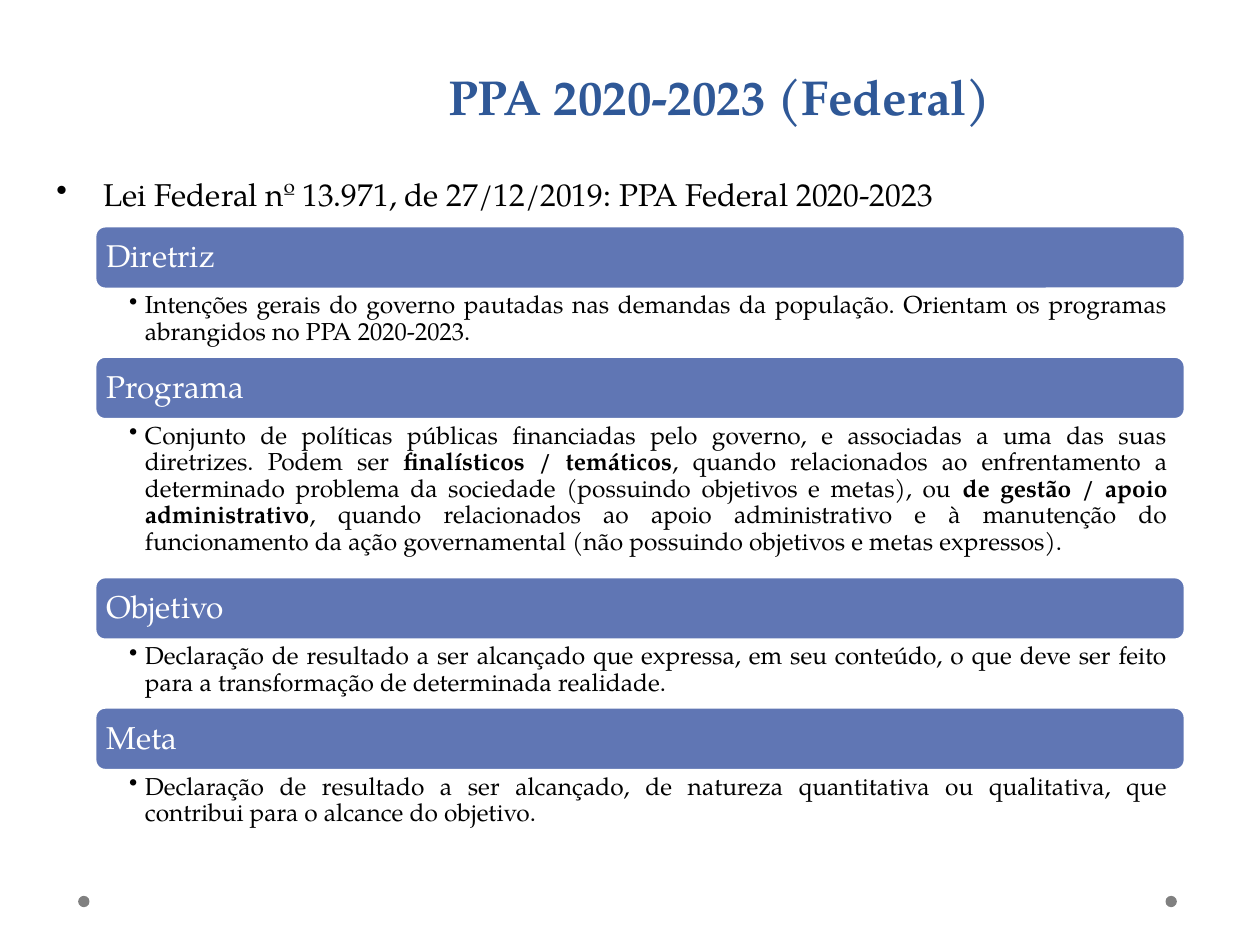
from pptx import Presentation
from pptx.dml.color import RGBColor
from pptx.enum.shapes import MSO_SHAPE as Kind
from pptx.enum.text import MSO_ANCHOR as Anchor, MSO_AUTO_SIZE as Fit, PP_ALIGN as Align
from pptx.util import Inches, Pt
from lxml.etree import SubElement
from pptx.oxml.ns import qn

# Grid of 100 columns by 75 rows
COLS, ROWS = 100, 75
WIDE, HIGH = Inches(10), Inches(7.5)
FONT = "TeX Gyre Pagella"
BLUE, BAR, GREY, WHITE, BLACK = "2F5897", "6076B4", "808080", "FFFFFF", "000000"
BAR_ROWS = 5.08

# Heading, rows of its text, text as (words, bold) parts
TERMS = [
    ("Diretriz", 5.27, [
        ("Intenções gerais do governo pautadas nas demandas da população. "
         "Orientam os programas abrangidos no PPA 2020-2023.", False)]),
    ("Programa", 12.42, [
        ("Conjunto de políticas públicas financiadas pelo governo, e associadas "
         "a uma das suas diretrizes. Podem ser ", False),
        ("finalísticos / temáticos", True),
        (", quando relacionados ao enfrentamento a determinado problema da "
         "sociedade (possuindo objetivos e metas), ou ", False),
        ("de gestão / apoio administrativo", True),
        (", quando relacionados ao apoio administrativo e à manutenção do "
         "funcionamento da ação governamental (não possuindo objetivos e metas "
         "expressos).", False)]),
    ("Objetivo", 5.27, [
        ("Declaração de resultado a ser alcançado que expressa, em seu conteúdo, "
         "o que deve ser feito para a transformação de determinada realidade.", False)]),
    ("Meta", 5.27, [
        ("Declaração de resultado a ser alcançado, de natureza quantitativa ou "
         "qualitativa, que contribui para o alcance do objetivo.", False)]),
]


def color(code):
    return RGBColor.from_string(code)


def col(n):
    return round(WIDE * n / COLS)


def row(n):
    return round(HIGH * n / ROWS)


def area(box):
    x, y, w, h = box
    return col(x), row(y), col(w), row(h)


def apply(item, values):
    for name, value in values.items():
        setattr(item, name, value)


def write(shape, parts, size, ink, para, frame=None, hang=0):
    """Fill a shape with one paragraph; hang is the bullet indent in columns."""
    text = shape.text_frame
    apply(text, {"word_wrap": True, "auto_size": Fit.NONE, **(frame or {})})
    line = text.paragraphs[0]
    apply(line, para)
    if hang:
        props = line._p.get_or_add_pPr()
        props.set("marL", str(col(hang)))
        props.set("indent", str(-col(hang)))
        SubElement(props, qn("a:buChar")).set("char", "•")
    for words, bold in parts:
        run = line.add_run()
        run.text = words
        apply(run.font, {"name": FONT, "size": Pt(size), "bold": bold})
        run.font.color.rgb = color(ink)


def margins(left, top, right, bottom):
    return {"margin_left": col(left), "margin_top": row(top),
            "margin_right": col(right), "margin_bottom": row(bottom)}


def solid(slide, kind, box, fill):
    shape = slide.shapes.add_shape(kind, *area(box))
    shape.shadow.inherit = False
    shape.fill.solid()
    shape.fill.fore_color.rgb = color(fill)
    shape.line.fill.background()
    return shape


def add_dots(slide, box):
    x, y, w, h = box
    for left in (x, x + w - h):
        solid(slide, Kind.OVAL, (left, y, h, h), GREY)


def add_title(slide, box):
    title = slide.shapes.title
    apply(title, dict(zip(("left", "top", "width", "height"), area(box))))
    write(title, [("PPA 2020-2023 (Federal)", True)], 28, BLUE,
          {"alignment": Align.CENTER, "line_spacing": Pt(58)},
          {"vertical_anchor": Anchor.MIDDLE})


def add_law(slide, box):
    words = "Lei Federal nº 13.971, de 27/12/2019: PPA Federal 2020-2023"
    write(slide.shapes.add_textbox(*area(box)), [(words, False)], 18, BLACK,
          {"alignment": Align.JUSTIFY}, hang=3.75)


def add_term(slide, box, head, parts):
    """A heading bar with its bulleted text below."""
    x, y, w, h = box
    para = {"alignment": Align.JUSTIFY, "line_spacing": 0.9}
    bar = solid(slide, Kind.ROUNDED_RECTANGLE, (x, y, w, BAR_ROWS), BAR)
    bar.line.color.rgb = color(WHITE)
    bar.line.width = Pt(2.25)
    write(bar, [(head, False)], 18, WHITE, para,
          {"vertical_anchor": Anchor.MIDDLE, **margins(0.7, 0.7, 0.7, 0.7)})
    body = slide.shapes.add_textbox(*area((x, y + BAR_ROWS, w, h - BAR_ROWS)))
    write(body, parts, 14, BLACK, para, margins(2.75, 0.25, 1.4, 0.25), hang=1.25)


def add_terms(slide, box):
    x, y, w = box
    for head, rows, parts in TERMS:
        h = BAR_ROWS + rows
        add_term(slide, (x, y, w, h), head, parts)
        y += h


def main():
    deck = Presentation()
    apply(deck, {"slide_width": WIDE, "slide_height": HIGH})
    slide = deck.slides.add_slide(deck.slide_layouts[5])
    add_dots(slide, (6.2, 71.1, 87.2, 0.9))
    add_title(slide, (18.5, 1.3, 77.2, 9.3))
    add_terms(slide, (7.5, 17.9, 86.6))
    add_law(slide, (3.5, 13.4, 91.3, 4.8))
    deck.save("out.pptx")


if __name__ == "__main__":
    main()
